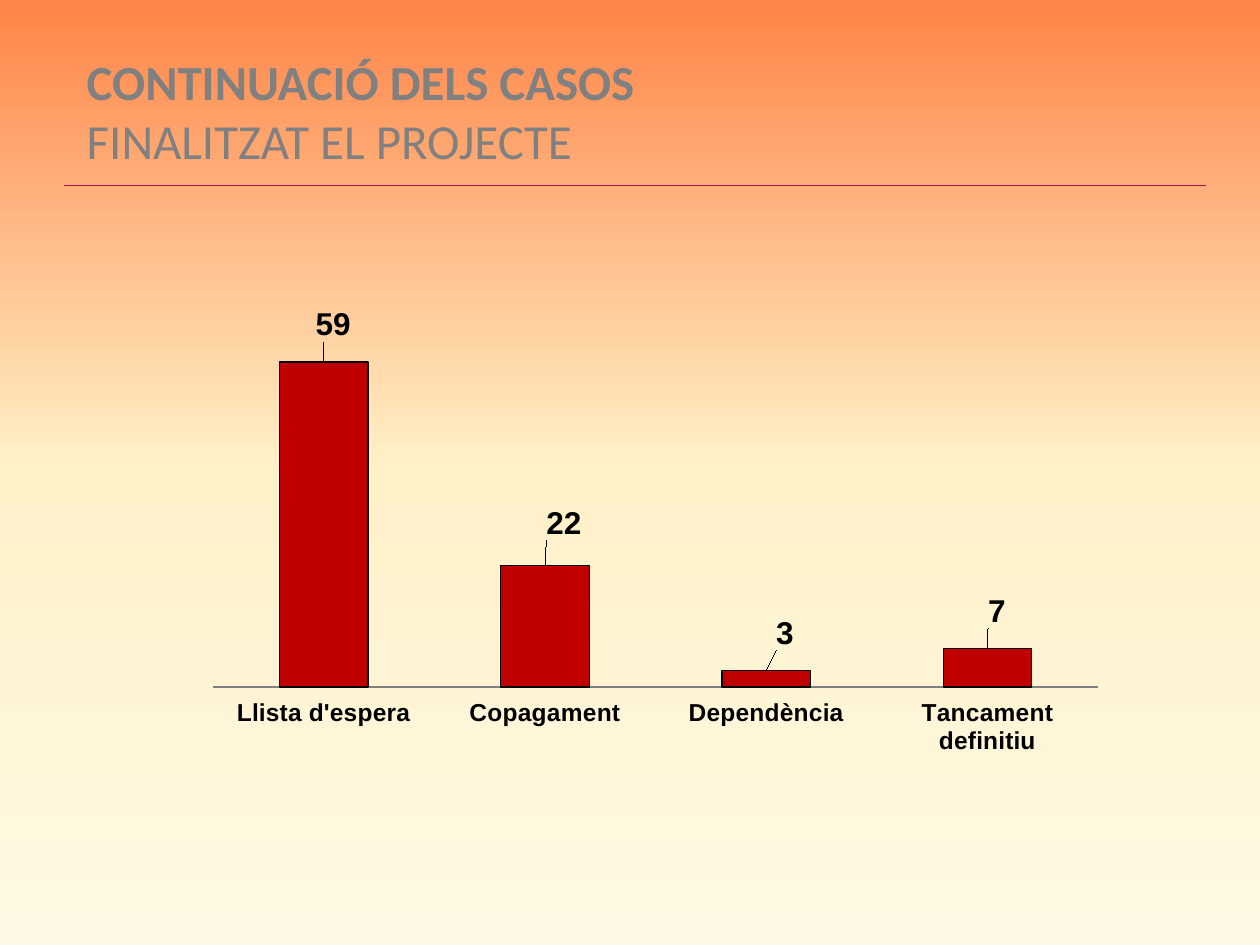
from copy import deepcopy

from lxml import etree
from pptx import Presentation
from pptx.chart.data import CategoryChartData
from pptx.dml.color import RGBColor
from pptx.enum.chart import XL_CHART_TYPE, XL_LABEL_POSITION, XL_TICK_LABEL_POSITION, XL_TICK_MARK
from pptx.enum.shapes import MSO_CONNECTOR
from pptx.oxml import parse_xml
from pptx.oxml.ns import nsdecls, qn
from pptx.util import Inches, Pt

COLUMNS = XL_CHART_TYPE.COLUMN_CLUSTERED
OUTSIDE_END = XL_LABEL_POSITION.OUTSIDE_END
LABELS_LOW = XL_TICK_LABEL_POSITION.LOW
NO_TICKS = XL_TICK_MARK.NONE
STRAIGHT = MSO_CONNECTOR.STRAIGHT


def color(hex_text):
    return RGBColor.from_string(hex_text)


def manual_layout(x, y, size=None):
    """Chart layout: an inner plot area with a size, or a label offset."""
    parts = [("x", x), ("y", y)]
    modes = ""
    if size:
        modes = ('<c:layoutTarget val="inner"/><c:xMode val="edge"/>'
                 '<c:yMode val="edge"/>')
        parts += [("w", size[0]), ("h", size[1])]
    values = "".join(f'<c:{tag} val="{value}"/>' for tag, value in parts)
    return parse_xml(f'<c:layout {nsdecls("c")}><c:manualLayout>{modes}{values}'
                     '</c:manualLayout></c:layout>')


class CasesPage:
    title_font, title_color, title_size = "Calibri", "808080", 28
    chart_font, ink, bar_color = "Arial", "000000", "C00000"
    axis_color, rule_color = "808080", "AC0F54"

    def __init__(self, deck):
        self.page = deck.slides.add_slide(deck.slide_layouts[6])

    def background(self, hex_colors):
        fill = self.page.background.fill
        fill.gradient()
        fill.gradient_angle = 270
        first = fill.gradient_stops[0]._gs
        first.addnext(deepcopy(first))
        last = len(hex_colors) - 1
        for index, (stop, hex_text) in enumerate(zip(fill.gradient_stops, hex_colors)):
            stop.position = index / last
            stop.color.rgb = color(hex_text)

    def rule(self, left, right, top):
        line = self.page.shapes.add_connector(
            STRAIGHT, Inches(left), Inches(top), Inches(right), Inches(top))
        line.line.color.rgb = color(self.rule_color)
        line.line.width = Pt(0.25)
        etree.SubElement(line._element.spPr, qn("a:effectLst"))

    def title(self, left, top, width, height, lines):
        box = self.page.shapes.add_textbox(
            Inches(left), Inches(top), Inches(width), Inches(height))
        frame = box.text_frame
        frame.word_wrap = True
        frame.text = "\n".join(text for text, bold in lines)
        for para, (text, bold) in zip(frame.paragraphs, lines):
            self.style(para.font, self.title_font, self.title_size,
                       self.title_color, bold)

    def style(self, font, name, size, hex_text, bold):
        font.name, font.size, font.bold = name, Pt(size), bold
        font.color.rgb = color(hex_text)

    def column_chart(self, left, top, width, height, cases, offsets):
        data = CategoryChartData()
        data.categories = list(cases)
        data.add_series("Series 1", list(cases.values()))
        chart = self.page.shapes.add_chart(
            COLUMNS, Inches(left), Inches(top), Inches(width), Inches(height), data).chart
        chart.has_legend = chart.has_title = False
        self.style(chart.font, self.chart_font, 18, self.ink, False)

        # Plot area
        plot_area = chart._chartSpace.chart.plotArea
        for layout in plot_area.findall(qn("c:layout")):
            plot_area.remove(layout)
        plot_area.insert(0, manual_layout(0.031, 0.074, (0.939, 0.777)))

        # Axes
        values = chart.value_axis
        values.minimum_scale, values.maximum_scale = 0, 70
        values.has_major_gridlines = values.visible = False
        names = chart.category_axis
        names.major_tick_mark = names.minor_tick_mark = NO_TICKS
        names.tick_label_position = LABELS_LOW
        names.format.line.color.rgb = color(self.axis_color)
        names.format.line.width = Pt(0.75)
        self.style(names.tick_labels.font, self.chart_font, 14, self.ink, True)

        # Bars and their values
        plot = chart.plots[0]
        plot.gap_width = 150
        plot.vary_by_categories = False
        series = plot.series[0]
        series.format.fill.solid()
        series.format.fill.fore_color.rgb = color(self.bar_color)
        series.format.line.color.rgb = color(self.ink)
        series.format.line.width = Pt(0.75)
        labels = series.data_labels
        labels.show_value = True
        labels.position = OUTSIDE_END
        self.style(labels.font, self.chart_font, 18, self.ink, True)
        for index, offset in enumerate(offsets):
            label = series.points[index].data_label
            self.style(label.font, self.chart_font, 18, self.ink, True)
            label.position = OUTSIDE_END
            element = labels._element.findall(qn("c:dLbl"))[index]
            element.find(qn("c:idx")).addnext(manual_layout(*offset))


def main():
    deck = Presentation()
    deck.slide_width, deck.slide_height = Inches(10), Inches(7.5)
    page = CasesPage(deck)

    page.background(["FF8447", "FFF2C9", "FFF8E4"])
    page.rule(0.51, 9.57, 1.47)
    cases = {"Llista d'espera": 59, "Copagament": 22,
             "Dependència": 3, "Tancament definitiu": 7}
    label_offsets = [(0.01, -0.03), (0.02, -0.04), (0.02, -0.03), (0.01, -0.03)]
    page.column_chart(1.46, 2.1, 7.48, 3.94, cases, label_offsets)
    page.title(0.59, 0.36, 6.06, 1.04, [("CONTINUACIÓ DELS CASOS", True),
                                        ("FINALITZAT EL PROJECTE", False)])
    deck.save("out.pptx")


if __name__ == "__main__":
    main()
